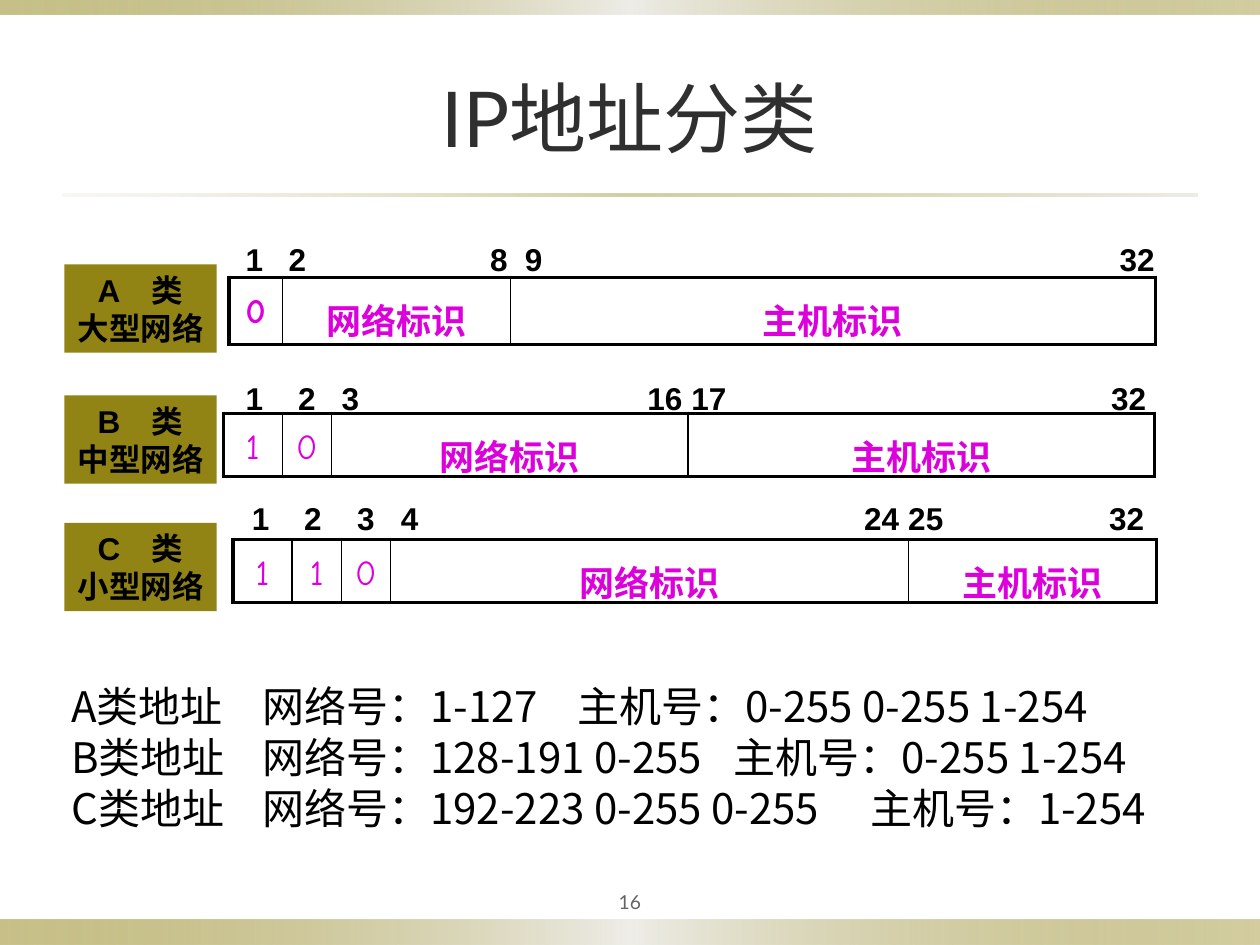
from lxml.etree import SubElement as Sub
from pptx import Presentation
from pptx.dml.color import RGBColor as Rgb
from pptx.enum.shapes import MSO_SHAPE as Kind
from pptx.enum.text import MSO_ANCHOR as Anchor, PP_ALIGN as Align
from pptx.oxml.ns import qn
from pptx.util import Cm, Pt

OLIVE = Rgb(0x91, 0x84, 0x15)
PALE = Rgb(0xEE, 0xED, 0xE8)
SAND = Rgb(0xDC, 0xD9, 0xCC)
INK = Rgb(0x2F, 0x2F, 0x2F)
GREY = Rgb(0x63, 0x63, 0x63)
BLACK = Rgb(0, 0, 0)
PINK = Rgb(0xDD, 0, 0xDD)
CJK = "Noto Sans CJK SC"

TITLE = dict(name="Lato", size=Pt(44), color=INK)
PAGE = dict(name="Lato", size=Pt(11), color=GREY)
BOLD = dict(name="Arial", size=Pt(18), color=BLACK, bold=True)
CELL = dict(name="Comic Neue", size=Pt(20), color=PINK)
BODY = dict(name=CJK, size=Pt(24), color=BLACK)

BAND = [(0, OLIVE, 50), (50, PALE, 100), (100, OLIVE, 40)]
RULE = [(0, SAND, 20), (50, OLIVE, 40), (100, SAND, 50)]

# Each class: name, size, badge top, table (left, top, height),
# columns (text, width), ruler (left, top, width), marks (text, tab)
ROWS = [
    ("A", "大型网络", 5.33, (4.62, 5.59, 1.35),
     [("0", 1.07), ("网络标识", 4.6), ("主机标识", 13)],
     (4.7, 4.72, 18.85),
     [("1", 0), ("2", 0.87), ("8", 4.93), ("9", 5.63), ("32", 17.62)]),
    ("B", "中型网络", 7.97, (4.5, 8.33, 1.19),
     [("1", 1.19), ("0", 0.99), ("网络标识", 7.19), ("主机标识", 9.4)],
     (4.7, 7.52, 18.67),
     [("1", 0), ("2", 1.06), ("3", 1.94), ("16", 8.1), ("17", 8.99),
      ("32", 17.45)]),
    ("C", "小型网络", 10.54, (4.7, 10.87, 1.19),
     [("1", 1.19), ("1", 0.99), ("0", 0.99), ("网络标识", 10.44),
      ("主机标识", 5)],
     (4.83, 9.93, 18.49),
     [("1", 0), ("2", 1.05), ("3", 2.12), ("4", 3), ("24", 12.34),
      ("25", 13.23), ("32", 17.28)]),
]

# Address line: class, network part, host part, tab of the host part
LINES = [
    ("A类地址", "网络号：1-127", "主机号：0-255 0-255 1-254", 10.2),
    ("B类地址", "网络号：128-191 0-255", "主机号：0-255 1-254", 13.35),
    ("C类地址", "网络号：192-223 0-255 0-255", "主机号：1-254", 16.1),
]


def write(para, text, form, align=Align.LEFT, gap=None, tabs=()):
    para.alignment = align
    if gap:
        para.line_spacing = gap
    if tabs:
        stops = Sub(para._p.get_or_add_pPr(), qn("a:tabLst"))
        for pos in tabs:
            Sub(stops, qn("a:tab"), pos=str(Cm(pos)), algn="l")
    run = para.add_run()
    run.text = text
    for key, val in form.items():
        if key == "color":
            run.font.color.rgb = val
        else:
            setattr(run.font, key, val)
    Sub(run._r.get_or_add_rPr(), qn("a:ea"), typeface=CJK)


def frame(slide, box, **form):
    text = slide.shapes.add_textbox(*map(Cm, box)).text_frame
    text.word_wrap = True
    for key, val in form.items():
        setattr(text, key, val)
    return text


def block(slide, box):
    rect = slide.shapes.add_shape(Kind.RECTANGLE, *map(Cm, box))
    rect.shadow.inherit = False
    rect.line.fill.background()
    return rect


def strip(slide, box, stops):
    fill = block(slide, box).fill
    fill.gradient()
    fill.gradient_angle = 0
    group = fill.gradient_stops[0]._gs.getparent()
    for old in list(group):
        group.remove(old)
    for pos, color, alpha in stops:
        stop = Sub(group, qn("a:gs"), pos=str(pos * 1000))
        tint = Sub(stop, qn("a:srgbClr"), val=str(color))
        Sub(tint, qn("a:alpha"), val=str(alpha * 1000))


def border(cell, first, last):
    props = cell._tc.get_or_add_tcPr()
    sides = dict(lnL=first, lnR=last, lnT=True, lnB=True)
    for side, outer in sides.items():
        line = Sub(props, qn("a:" + side), w=str(Pt(2.25 if outer else 1)))
        paint = Sub(line, qn("a:solidFill"))
        Sub(paint, qn("a:srgbClr"), val=str(BLACK))
    cell.fill.background()


def badge(slide, box, name, size):
    rect = block(slide, box)
    rect.fill.solid()
    rect.fill.fore_color.rgb = OLIVE
    text = rect.text_frame
    text.word_wrap = False
    text.vertical_anchor = Anchor.MIDDLE
    write(text.paragraphs[0], name + "　类", BOLD, Align.CENTER, Pt(21.7))
    write(text.add_paragraph(), size, BOLD, Align.CENTER, Pt(21.7))


def fields(slide, box, cols):
    left, top, high = box
    wide = sum(width for _, width in cols)
    table = slide.shapes.add_table(
        1, len(cols), Cm(left), Cm(top), Cm(wide), Cm(high)).table
    table.first_row = table.horz_banding = False
    table.rows[0].height = Cm(high)
    for i, (text, width) in enumerate(cols):
        table.columns[i].width = Cm(width)
        cell = table.cell(0, i)
        border(cell, i == 0, i == len(cols) - 1)
        bold = len(text) > 1 or len(cols) == 3
        write(cell.text_frame.paragraphs[0], text, dict(CELL, bold=bold),
              Align.CENTER, 1.2)


def ruler(slide, box, marks):
    text = frame(slide, (*box, 1.02), margin_right=0)
    write(text.paragraphs[0], "\t".join(mark for mark, _ in marks), BOLD,
          tabs=[pos for _, pos in marks[1:]])


def ranges(slide, box):
    text = frame(slide, box, margin_right=0)
    for i, (*parts, tab) in enumerate(LINES):
        para = text.add_paragraph() if i else text.paragraphs[0]
        write(para, "\t".join(parts), BODY, gap=Pt(29), tabs=(3.85, tab))


def main():
    deck = Presentation()
    deck.slide_width, deck.slide_height = Cm(25.4), Cm(19.05)
    slide = deck.slides.add_slide(deck.slide_layouts[6])

    # Bands and rule
    strip(slide, (0, 18.54, 25.4, 0.51), BAND)
    strip(slide, (0, 0, 25.4, 0.3), BAND)
    strip(slide, (1.27, 3.91, 22.86, 0.05), RULE)

    # Title and page number
    for box, words, form in [
            ((1.27, 0.76, 22.86, 3.18), "IP地址分类", TITLE),
            ((11.43, 17.78, 2.54, 0.79), "16", PAGE)]:
        text = frame(slide, box, vertical_anchor=Anchor.MIDDLE)
        write(text.paragraphs[0], words, form, Align.CENTER)

    # Address classes
    for name, size, top, grid, cols, scale, marks in ROWS:
        fields(slide, grid, cols)
        badge(slide, (1.3, top, 3.07, 1.78), name, size)
        ruler(slide, scale, marks)

    # Address ranges
    ranges(slide, (1.19, 13.59, 23.32, 3.33))
    deck.save("out.pptx")


if __name__ == "__main__":
    main()
